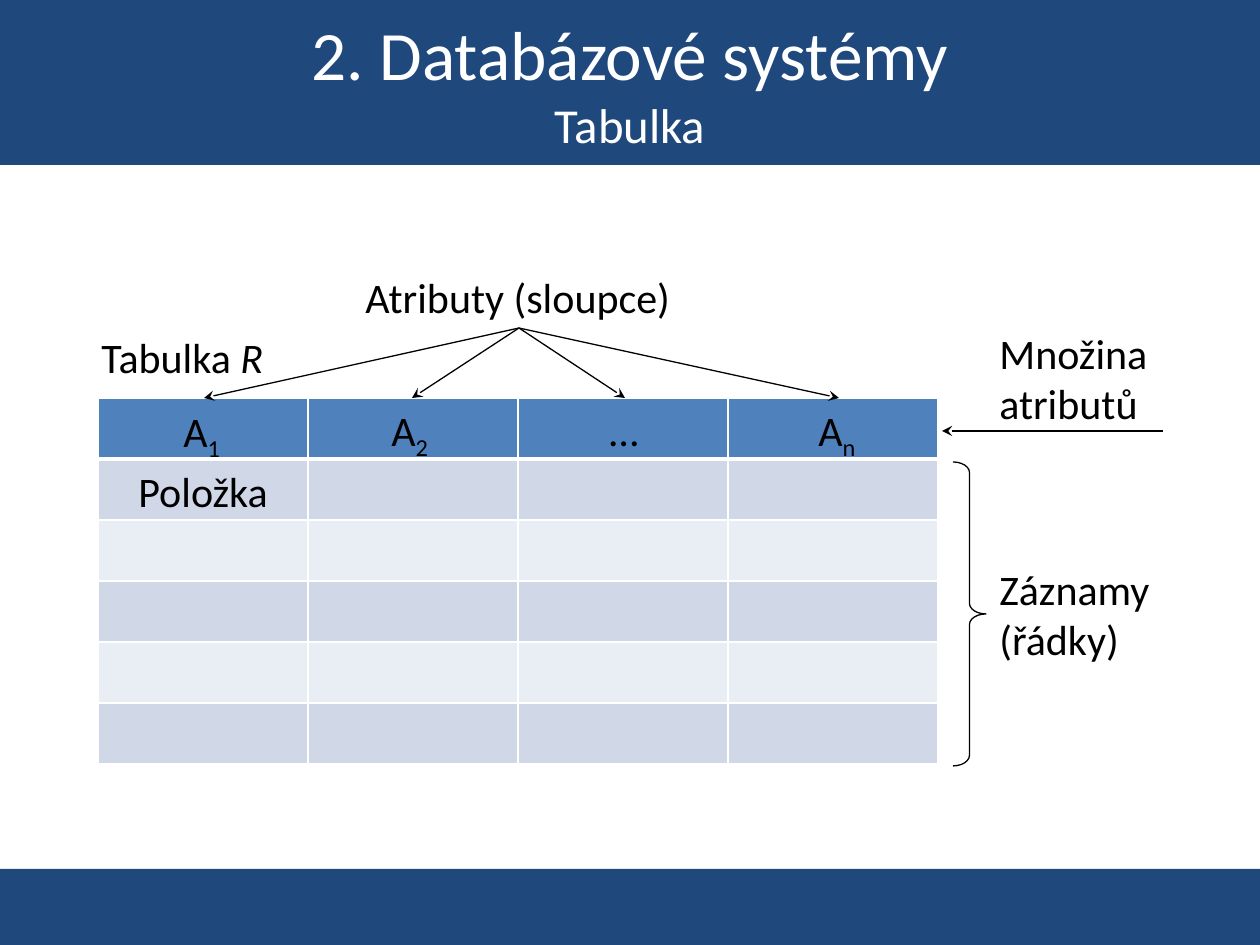
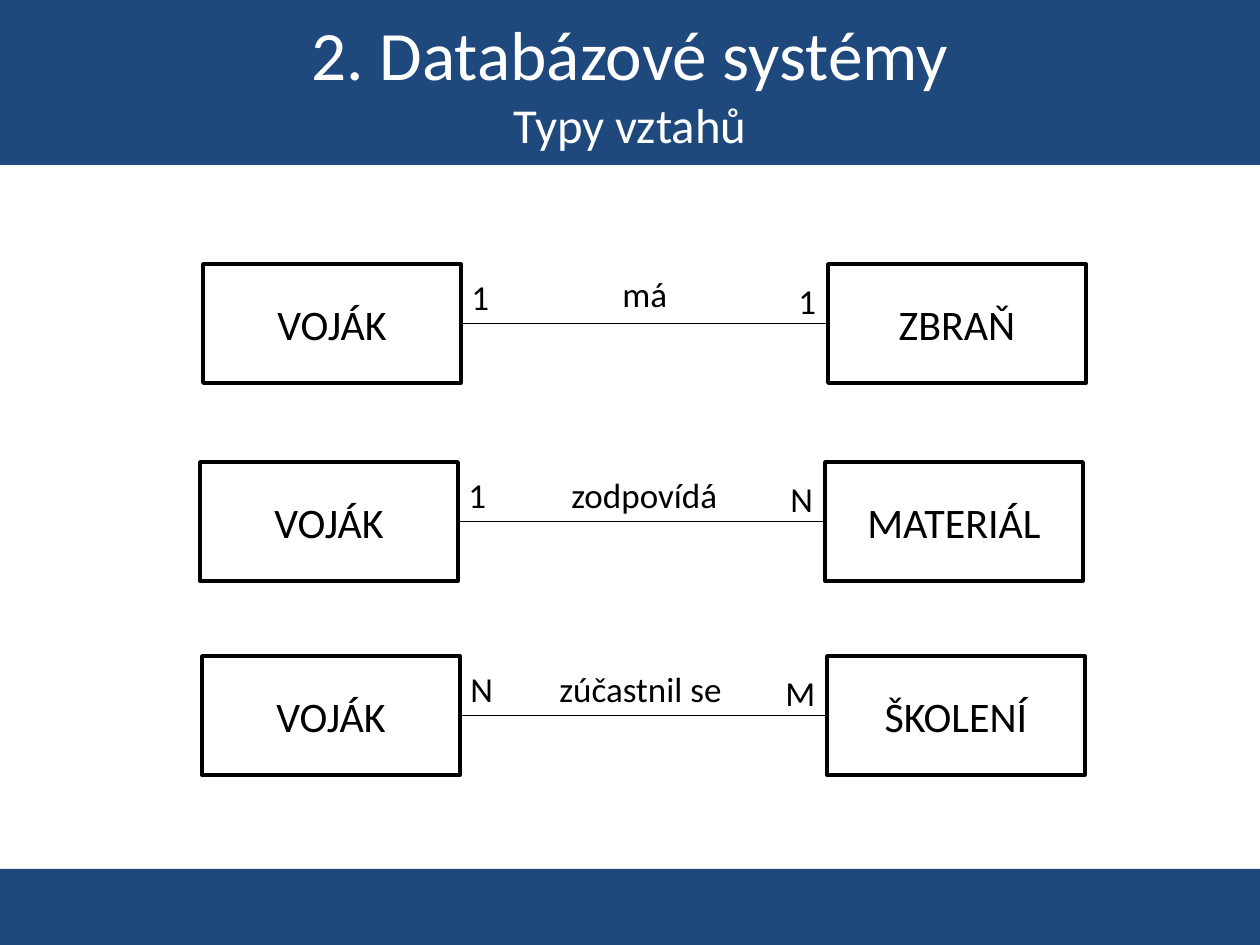
import pptx
import pptx.util
from lxml import etree
from pptx.dml.color import RGBColor
from pptx.enum.shapes import MSO_CONNECTOR, MSO_SHAPE
from pptx.enum.text import MSO_ANCHOR, MSO_AUTO_SIZE, PP_ALIGN
from pptx.oxml.ns import qn

# Shared look
PX = 914400 / 126
NAVY = RGBColor(0x1F, 0x49, 0x7D)
BLUE = RGBColor(0x4F, 0x81, 0xBD)
BAND_DARK = RGBColor(0xD0, 0xD8, 0xE8)
BAND_LIGHT = RGBColor(0xE9, 0xED, 0xF4)
WHITE = RGBColor(0xFF, 0xFF, 0xFF)
BLACK = RGBColor(0x00, 0x00, 0x00)
PAGE_SIZE = (1260, 945)
TITLE_BAND = (0, 0, 1260, 165)
FOOTER_BAND = (0, 869, 1260, 76)
TITLE, SUBTITLE, BODY, SMALL = 39.6, 27.9, 24, 20
THIN, THICK = 0.75, 2
CHAPTER = "2. Databázové systémy"

# Slide 1: a table and its named parts
TABLE_AT = (98, 398)
COLUMNS, ROWS, COLUMN_WIDTH, ROW_HEIGHT = 4, 6, 210, 61
TABLE_LABELS = [
    ([("Tabulka ", {}), ("R", {"italic": True})], (89, 325, 189, 63)),
    ([("Atributy (sloupce)", {})], (353, 265, 333, 63)),
    ([("…", {})], (597, 398, 55, 63)),
    ([("Množina\natributů", {})], (987, 321, 175, 115)),
    ([("Záznamy\n(řádky)", {})], (987, 557, 178, 115)),
    ([("Položka", {})], (126, 459, 156, 63)),
]
ATTRIBUTES = [("1", 171, 399), ("2", 379, 398), ("n", 806, 398)]
ATTRIBUTES_POINT = (519, 328)
COLUMN_TIPS = [204, 412, 625, 839]
HEADER_ARROW = ((942, 431), (1163, 431))
RECORDS_BRACE = (953, 462, 33, 304)

# Slide 2: left, top, owner, its count, verb, verb box, other count, other entity
RELATIONS = [
    (203, 264, "VOJÁK", "1", "má", (610, 266, 71), "1", "ZBRAŇ"),
    (200, 462, "VOJÁK", "1", "zodpovídá", (559, 467, 173), "N", "MATERIÁL"),
    (202, 656, "VOJÁK", "N", "zúčastnil se", (547, 661, 189), "M", "ŠKOLENÍ"),
]
ENTITY_WIDTH, ENTITY_HEIGHT, ENTITY_STEP = 258, 119, 625
COUNT_WIDTHS = {"1": 43, "N": 48, "M": 55}
SMALL_HEIGHT = 55


def emu(*lengths):
    return [pptx.util.Emu(round(length * PX)) for length in lengths]


def write(frame, spans, size=BODY, color=BLACK, align=PP_ALIGN.LEFT):
    """Fill one paragraph with formatted spans; a newline is a line break."""
    para = frame.paragraphs[0]
    para.alignment = align
    for text, changes in spans:
        style = {"name": "Calibri", "size": size, **changes}
        baseline = style.pop("baseline", None)
        style["size"] = pptx.util.Pt(style["size"])
        for number, line in enumerate(text.split("\n")):
            if number:
                para.add_line_break()
                line_break = para._p.findall(qn("a:br"))[-1]
                etree.SubElement(line_break, qn("a:rPr"), sz=str(style["size"].centipoints))
            if not line:
                continue
            span = para.add_run()
            span.text = line
            for name, value in style.items():
                setattr(span.font, name, value)
            span.font.color.rgb = color
            if baseline:
                span.font._element.set("baseline", baseline)


def add_label(shapes, spans, place, size=BODY):
    box = shapes.add_textbox(*emu(*place))
    box.text_frame.word_wrap = False
    box.text_frame.auto_size = MSO_AUTO_SIZE.SHAPE_TO_FIT_TEXT
    write(box.text_frame, spans, size)


def add_shape(shapes, kind, place, fill=None, line=None, width=THIN):
    shape = shapes.add_shape(kind, *emu(*place))
    shape.shadow.inherit = False
    if fill is None:
        shape.fill.background()
    else:
        shape.fill.solid()
        shape.fill.fore_color.rgb = fill
    if line is None:
        shape.line.fill.background()
    else:
        shape.line.color.rgb = line
        shape.line.width = pptx.util.Pt(width)
    return shape


def add_line(shapes, start, end, arrow=False):
    line = shapes.add_connector(MSO_CONNECTOR.STRAIGHT, *emu(*start, *end))
    line.line.color.rgb = BLACK
    line.line.width = pptx.util.Pt(THIN)
    if arrow:
        etree.SubElement(line.line._get_or_add_ln(), qn("a:headEnd"), type="stealth")
    etree.SubElement(line._element.spPr, qn("a:effectLst"))


def add_page(deck, subtitle):
    page = deck.slides.add_slide(deck.slide_layouts[5])
    title = page.shapes.title
    title.left, title.top, title.width, title.height = emu(*TITLE_BAND)
    title.fill.solid()
    title.fill.fore_color.rgb = NAVY
    frame = title.text_frame
    frame.auto_size = MSO_AUTO_SIZE.NONE
    frame.vertical_anchor = MSO_ANCHOR.MIDDLE
    spans = [(CHAPTER + "\n", {}), (subtitle, {"size": SUBTITLE})]
    write(frame, spans, TITLE, WHITE, PP_ALIGN.CENTER)
    return page


def add_footer_band(page):
    """Move the band to the layout, so that every page shows it."""
    band = add_shape(page.shapes, MSO_SHAPE.RECTANGLE, FOOTER_BAND, NAVY)
    page.slide_layout.shapes.element.append(band._element)


def format_cell(cell, fill, bottom):
    cell.fill.solid()
    cell.fill.fore_color.rgb = fill
    properties = cell._tc.get_or_add_tcPr()
    for index, (side, width) in enumerate([("L", 1), ("R", 1), ("T", 1), ("B", bottom)]):
        border = etree.Element(qn("a:ln" + side), w=str(pptx.util.Pt(width)))
        paint = etree.SubElement(border, qn("a:solidFill"))
        etree.SubElement(paint, qn("a:srgbClr"), val=str(WHITE))
        properties.insert(index, border)


def add_relation_table(shapes):
    size = (COLUMNS * COLUMN_WIDTH, ROWS * ROW_HEIGHT)
    table = shapes.add_table(ROWS, COLUMNS, *emu(*TABLE_AT, *size)).table
    for number, row in enumerate(table.rows):
        fill = BAND_DARK if number % 2 else BAND_LIGHT
        for cell in row.cells:
            format_cell(cell, fill if number else BLUE, 1 if number else 3)


def build_table_page(deck):
    page = add_page(deck, "Tabulka")
    add_footer_band(page)
    shapes = page.shapes
    add_relation_table(shapes)
    for spans, place in TABLE_LABELS:
        add_label(shapes, spans, place)
    for index, left, top in ATTRIBUTES:
        add_label(shapes, [("A", {}), (index, {"baseline": "-25000"})], (left, top, 64, 63))
    for tip in COLUMN_TIPS:
        add_line(shapes, (tip, TABLE_AT[1]), ATTRIBUTES_POINT, arrow=True)
    add_line(shapes, *HEADER_ARROW, arrow=True)
    brace = add_shape(shapes, MSO_SHAPE.RIGHT_BRACE, RECORDS_BRACE, line=BLACK)
    brace.adjustments[0] = 0.32


def add_entity(shapes, name, left, top):
    place = (left, top, ENTITY_WIDTH, ENTITY_HEIGHT)
    entity = add_shape(shapes, MSO_SHAPE.RECTANGLE, place, WHITE, BLACK, THICK)
    entity.text_frame.vertical_anchor = MSO_ANCHOR.MIDDLE
    write(entity.text_frame, [(name, {})], align=PP_ALIGN.CENTER)


def build_relations_page(deck):
    page = add_page(deck, "Typy vztahů")
    for left, top, owner, count, verb, verb_box, other_count, other in RELATIONS:
        shapes = page.shapes.add_group_shape().shapes
        owner_edge, other_edge = left + ENTITY_WIDTH, left + ENTITY_STEP
        middle = top + ENTITY_HEIGHT / 2
        add_entity(shapes, owner, left, top)
        add_entity(shapes, other, other_edge, top)
        add_line(shapes, (other_edge, middle), (owner_edge, middle))
        width, other_width = COUNT_WIDTHS[count], COUNT_WIDTHS[other_count]
        labels = [
            (verb, verb_box),
            (count, (owner_edge - 2, top + 5, width)),
            (other_count, (other_edge + 1 - other_width, top + 9, other_width)),
        ]
        for text, place in labels:
            add_label(shapes, [(text, {})], (*place, SMALL_HEIGHT), SMALL)


def main():
    deck = pptx.Presentation()
    deck.slide_width, deck.slide_height = emu(*PAGE_SIZE)
    build_table_page(deck)
    build_relations_page(deck)
    deck.save("out.pptx")


if __name__ == "__main__":
    main()
